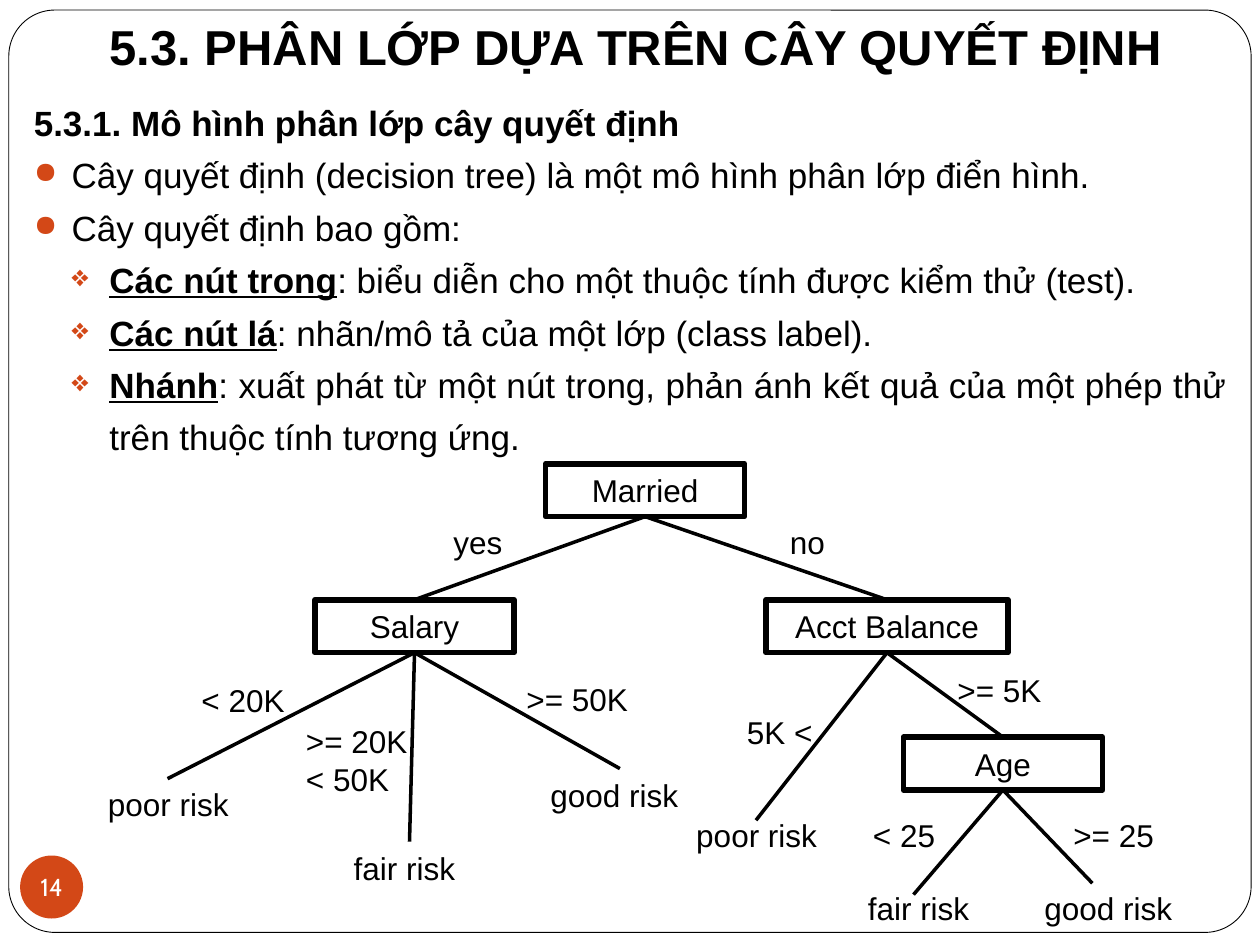
from dataclasses import dataclass

from lxml import etree
from pptx import Presentation
from pptx.dml.color import RGBColor
from pptx.enum.shapes import MSO_CONNECTOR, MSO_SHAPE
from pptx.enum.text import MSO_ANCHOR, PP_ALIGN
from pptx.oxml.ns import qn
from pptx.util import Pt

EMU_PER_PX = 9144  # 100 px to the inch
BLACK = RGBColor(0x00, 0x00, 0x00)
WHITE = RGBColor(0xFF, 0xFF, 0xFF)
ORANGE = RGBColor(0xD3, 0x48, 0x17)
LEFT, CENTER, JUSTIFY = PP_ALIGN.LEFT, PP_ALIGN.CENTER, PP_ALIGN.JUSTIFY
TOP, MIDDLE = MSO_ANCHOR.TOP, MSO_ANCHOR.MIDDLE
RECTANGLE, ROUNDED, OVAL = MSO_SHAPE.RECTANGLE, MSO_SHAPE.ROUNDED_RECTANGLE, MSO_SHAPE.OVAL
STRAIGHT = MSO_CONNECTOR.STRAIGHT
SITE_TOP, SITE_BOTTOM = 0, 2
NODE_HEIGHT = 42
INDENT = 30


@dataclass(frozen=True)
class Node:
    name: str
    left: int
    top: int
    width: int = 158


@dataclass(frozen=True)
class Branch:
    """A line from a node to another node, or to the point above a leaf."""
    parent: str
    child: str = ""
    end: tuple[int, int] = (0, 0)


@dataclass(frozen=True)
class Label:
    text: str
    left: int
    top: int
    width: int
    height: int = 40
    align: PP_ALIGN = LEFT


@dataclass(frozen=True)
class Point:
    """A body paragraph: bold lead, plain rest, bullet and indent level."""
    lead: str
    rest: str
    bullet: str = ""
    level: int = 1


POINTS = [
    Point("5.3.1. Mô hình phân lớp cây quyết định", ""),
    Point("", "Cây quyết định (decision tree) là một mô hình phân lớp điển hình.", "●"),
    Point("", "Cây quyết định bao gồm:", "●"),
    Point("Các nút trong", ": biểu diễn cho một thuộc tính được kiểm thử (test).", "❖", 2),
    Point("Các nút lá", ": nhãn/mô tả của một lớp (class label).", "❖", 2),
    Point("Nhánh", ": xuất phát từ một nút trong, phản ánh kết quả của một phép thử "
          "trên thuộc tính tương ứng.", "❖", 2),
]
NODES = [
    Node("Married", 433, 368),
    Node("Salary", 250, 476),
    Node("Acct Balance", 608, 476, 192),
    Node("Age", 717, 585),
]
BRANCHES = [
    Branch("Married", "Salary"),
    Branch("Married", "Acct Balance"),
    Branch("Salary", end=(133, 618)),
    Branch("Salary", end=(325, 668)),
    Branch("Salary", end=(492, 610)),
    Branch("Acct Balance", end=(600, 651)),
    Branch("Acct Balance", "Age"),
    Branch("Age", end=(725, 710)),
    Branch("Age", end=(867, 701)),
]
LABELS = [
    Label("yes", 350, 410, 67),
    Label("no", 617, 410, 67),
    Label("< 20K", 150, 536, 92),
    Label(">= 20K\n< 50K", 233, 568, 108, 71),
    Label(">= 50K", 408, 535, 117),
    Label("5K <", 583, 561, 75),
    Label(">= 5K", 750, 528, 108),
    Label("< 25", 683, 643, 75),
    Label(">= 25", 842, 643, 92),
    Label("poor risk", 75, 618, 117, align=CENTER),
    Label("fair risk", 267, 669, 108, align=CENTER),
    Label("good risk", 425, 611, 125, align=CENTER),
    Label("poor risk", 542, 643, 117, align=CENTER),
    Label("fair risk", 675, 701, 108, align=CENTER),
    Label("good risk", 817, 701, 125, align=CENTER),
]


def px(*lengths: int) -> list[int]:
    return [length * EMU_PER_PX for length in lengths]


def add_span(para, text: str, *, size: int = 18, font: str = "Arial",
             color: RGBColor = BLACK, bold: bool = False, underline: bool = False) -> None:
    span = para.add_run()
    span.text = text
    span.font.size = Pt(size)
    span.font.name = font
    span.font.color.rgb = color
    span.font.bold = bold
    span.font.underline = underline


def write(box, text: str, *, align: PP_ALIGN = LEFT, anchor: MSO_ANCHOR = TOP,
          wrap: bool = True, **span_format) -> None:
    frame = box.text_frame
    frame.word_wrap = wrap
    frame.vertical_anchor = anchor
    for index, line in enumerate(text.split("\n")):
        para = frame.add_paragraph() if index else frame.paragraphs[0]
        para.alignment = align
        add_span(para, line, **span_format)


def add_box(page, kind: MSO_SHAPE, *bounds: int, fill: RGBColor | None = None,
            line_width: float = 0):
    box = page.shapes.add_shape(kind, *px(*bounds))
    box.shadow.inherit = False
    if fill is None:
        box.fill.background()
    else:
        box.fill.solid()
        box.fill.fore_color.rgb = fill
    if line_width:
        box.line.color.rgb = BLACK
        box.line.width = Pt(line_width)
    else:
        box.line.fill.background()
    return box


def set_bullet(para, point: Point) -> None:
    """Give the paragraph its hanging indent and, if any, its bullet."""
    properties = para._p.get_or_add_pPr()
    margin, hang = px(INDENT * point.level, -INDENT)
    properties.set("marL", str(margin))
    properties.set("indent", str(hang))
    if not point.bullet:
        etree.SubElement(properties, qn("a:buNone"))
        return
    color = etree.SubElement(properties, qn("a:buClr"))
    etree.SubElement(color, qn("a:srgbClr"), val=str(ORANGE))
    etree.SubElement(properties, qn("a:buSzPct"), val="85000")
    etree.SubElement(properties, qn("a:buChar"), char=point.bullet)


def add_points(page, points: list[Point]) -> None:
    frame = page.shapes.add_textbox(*px(17, 67, 967, 283)).text_frame
    frame.word_wrap = True
    for index, point in enumerate(points):
        para = frame.add_paragraph() if index else frame.paragraphs[0]
        para.alignment = JUSTIFY
        para.line_spacing = 1.25
        set_bullet(para, point)
        if point.lead:
            add_span(para, point.lead, size=20, bold=True, underline=bool(point.rest))
        if point.rest:
            add_span(para, point.rest, size=20)


def add_node(page, node: Node):
    box = add_box(page, RECTANGLE, node.left, node.top, node.width, NODE_HEIGHT, line_width=3.25)
    write(box, node.name, align=CENTER, anchor=MIDDLE)
    return box


def add_branch(page, branch: Branch, boxes: dict) -> None:
    line = page.shapes.add_connector(STRAIGHT, 0, 0, *px(*branch.end))
    line.begin_connect(boxes[branch.parent], SITE_BOTTOM)
    if branch.child:
        line.end_connect(boxes[branch.child], SITE_TOP)
    line.line.color.rgb = BLACK
    line.line.width = Pt(2)
    etree.SubElement(line._element.spPr, qn("a:effectLst"))


def add_label(page, label: Label, **text_format) -> None:
    box = page.shapes.add_textbox(*px(label.left, label.top, label.width, label.height))
    write(box, label.text, align=label.align, **text_format)


def main() -> None:
    deck = Presentation()
    deck.slide_width, deck.slide_height = px(1000, 750)
    page = deck.slides.add_slide(deck.slide_layouts[6])
    border = add_box(page, ROUNDED, 7, 8, 986, 732, fill=WHITE, line_width=0.5)
    border.adjustments[0] = 0.05
    badge = add_box(page, OVAL, 16, 679, 50, 50, fill=ORANGE)
    frame = badge.text_frame
    frame.margin_left = frame.margin_top = frame.margin_right = frame.margin_bottom = 0
    write(badge, "14", align=CENTER, anchor=MIDDLE, wrap=False, size=14, font="Cabin", color=WHITE)
    title = Label("5.3. PHÂN LỚP DỰA TRÊN CÂY QUYẾT ĐỊNH", 67, 8, 875, 57, CENTER)
    add_label(page, title, size=28, bold=True)
    add_points(page, POINTS)
    boxes = {node.name: add_node(page, node) for node in NODES}
    for branch in BRANCHES:
        add_branch(page, branch, boxes)
    for label in LABELS:
        add_label(page, label)
    deck.save("out.pptx")


if __name__ == "__main__":
    main()
